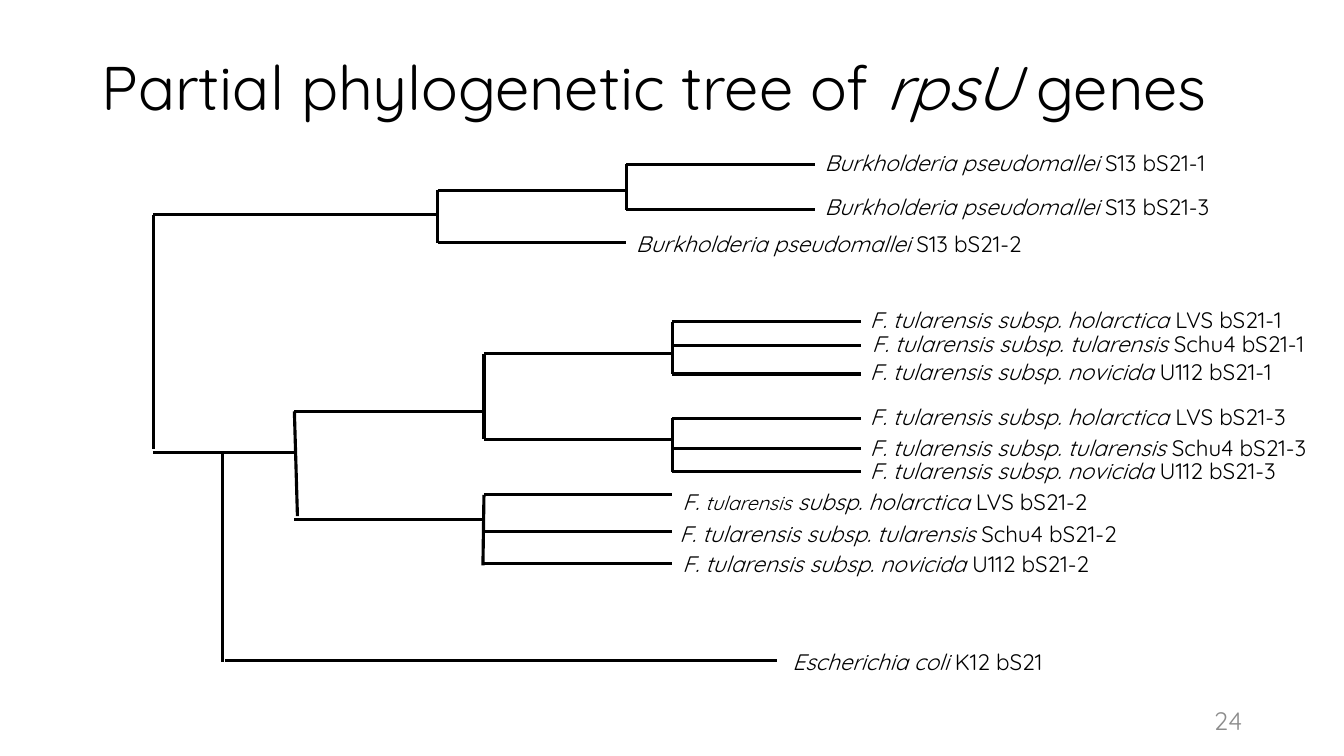
from lxml import etree
from pptx import Presentation
from pptx.dml.color import RGBColor
from pptx.enum.shapes import MSO_CONNECTOR
from pptx.enum.text import MSO_ANCHOR, MSO_AUTO_SIZE, PP_ALIGN
from pptx.oxml.ns import qn
from pptx.util import Inches, Pt

STRAIGHT = MSO_CONNECTOR.STRAIGHT
TOP, MIDDLE, BOTTOM = MSO_ANCHOR.TOP, MSO_ANCHOR.MIDDLE, MSO_ANCHOR.BOTTOM
LEFT, CENTER, RIGHT = PP_ALIGN.LEFT, PP_ALIGN.CENTER, PP_ALIGN.RIGHT
NO_AUTOFIT = MSO_AUTO_SIZE.NONE

BLACK = RGBColor(0x00, 0x00, 0x00)
GRAY = RGBColor(0x8C, 0x8C, 0x8C)
FONT = "Quicksand"

BURKHOLDERIA = "Burkholderia pseudomallei "
HOLARCTICA = "F. tularensis subsp. holarctica "
TULARENSIS = "F. tularensis subsp. tularensis "
NOVICIDA = "F. tularensis subsp. novicida "

# Left, top, species in italics, gene in upright letters
TIP_LABELS = [
    (8.08, 1.43, BURKHOLDERIA, "S13 bS21-1"),
    (8.08, 1.87, BURKHOLDERIA, "S13 bS21-3"),
    (6.21, 2.23, BURKHOLDERIA, "S13 bS21-2"),
    (8.53, 2.99, HOLARCTICA, "LVS bS21-1"),
    (8.55, 3.23, TULARENSIS, "Schu4 bS21-1"),
    (8.53, 3.5, NOVICIDA, "U112 bS21-1"),
    (8.53, 3.95, HOLARCTICA, "LVS bS21-3"),
    (8.53, 4.26, TULARENSIS, "Schu4 bS21-3"),
    (8.53, 4.49, NOVICIDA, "U112 bS21-3"),
    (6.64, 5.11, TULARENSIS, "Schu4 bS21-2"),
    (6.67, 5.41, NOVICIDA, "U112 bS21-2"),
    (7.7, 6.38, " Escherichia coli ", "K12 bS21"),
]


def write_text(shape, runs, size=16, color=BLACK, align=LEFT, anchor=TOP,
               line_spacing=None):
    """Write runs of (text, italic) or (text, italic, own size)."""
    frame = shape.text_frame
    frame.word_wrap = True
    frame.auto_size = NO_AUTOFIT
    frame.vertical_anchor = anchor
    paragraph = frame.paragraphs[0]
    paragraph.alignment = align
    paragraph.line_spacing = line_spacing
    for text, italic, *own_size in runs:
        run = paragraph.add_run()
        run.text = text
        run.font.name = FONT
        run.font.size = Pt(own_size[0] if own_size else size)
        run.font.italic = italic
        run.font.color.rgb = color


def add_text(slide, left, top, width, height, runs, **text_format):
    box = slide.shapes.add_textbox(Inches(left), Inches(top),
                                   Inches(width), Inches(height))
    write_text(box, runs, **text_format)


def add_title(slide, runs):
    title = slide.shapes.title
    title.left, title.top = Inches(0), Inches(0.29)
    title.width, title.height = Inches(12.98), Inches(0.99)
    write_text(title, runs, size=44, align=CENTER, anchor=BOTTOM,
               line_spacing=0.9)


def add_line(slide, start, end):
    points = [Inches(value) for value in (*start, *end)]
    line = slide.shapes.add_connector(STRAIGHT, *points)
    line.line.color.rgb = BLACK
    line.line.width = Pt(2.25)
    etree.SubElement(line._element.spPr, qn("a:effectLst"))


def add_fork(slide, left, right, heights, spine_end=None):
    """Draw a vertical spine with one branch to the right at each height."""
    add_line(slide, (left, heights[0]), spine_end or (left, heights[-1]))
    for height in heights:
        add_line(slide, (left, height), (right, height))


def add_tree(slide):
    # Root and outgroup
    add_fork(slide, 1.52, 4.34, [2.13], spine_end=(1.52, 4.45))
    add_line(slide, (1.52, 4.49), (2.93, 4.49))
    add_line(slide, (2.21, 4.49), (2.21, 6.57))
    add_line(slide, (2.23, 6.55), (7.71, 6.55))

    # Burkholderia
    add_fork(slide, 4.34, 6.21, [1.89, 2.41])
    add_fork(slide, 6.21, 8.08, [1.63, 2.08])

    # Francisella
    add_fork(slide, 2.92, 4.8, [4.08, 5.15], spine_end=(2.95, 5.12))
    add_fork(slide, 4.8, 6.67, [3.51, 4.36])
    add_fork(slide, 6.67, 8.54, [3.19, 3.43, 3.71])
    add_fork(slide, 6.67, 8.54, [4.15, 4.45, 4.68])
    add_fork(slide, 4.8, 6.67, [4.91, 5.27, 5.59], spine_end=(4.79, 5.61))


def add_tip_labels(slide):
    for left, top, species, gene in TIP_LABELS:
        add_text(slide, left, top, 4.8, 0.37, [(species, True), (gene, False)])
    # This label has one word in a smaller size
    add_text(slide, 6.67, 4.79, 4.8, 0.37,
             [("F. ", True), ("tularensis", True, 14),
              (" subsp. holarctica ", True), ("LVS bS21-2", False)])


def main():
    presentation = Presentation()
    presentation.slide_width = Inches(13.33)
    presentation.slide_height = Inches(7.5)
    title_only = presentation.slide_layouts[5]
    slide = presentation.slides.add_slide(title_only)

    add_title(slide, [("Partial phylogenetic tree of ", False),
                      ("rpsU", True), (" genes", False)])
    add_tree(slide)
    add_tip_labels(slide)

    # Slide number
    add_text(slide, 9.42, 6.95, 3, 0.4, [("24", False)], size=18, color=GRAY,
             align=RIGHT, anchor=MIDDLE)

    presentation.save("out.pptx")


if __name__ == "__main__":
    main()
